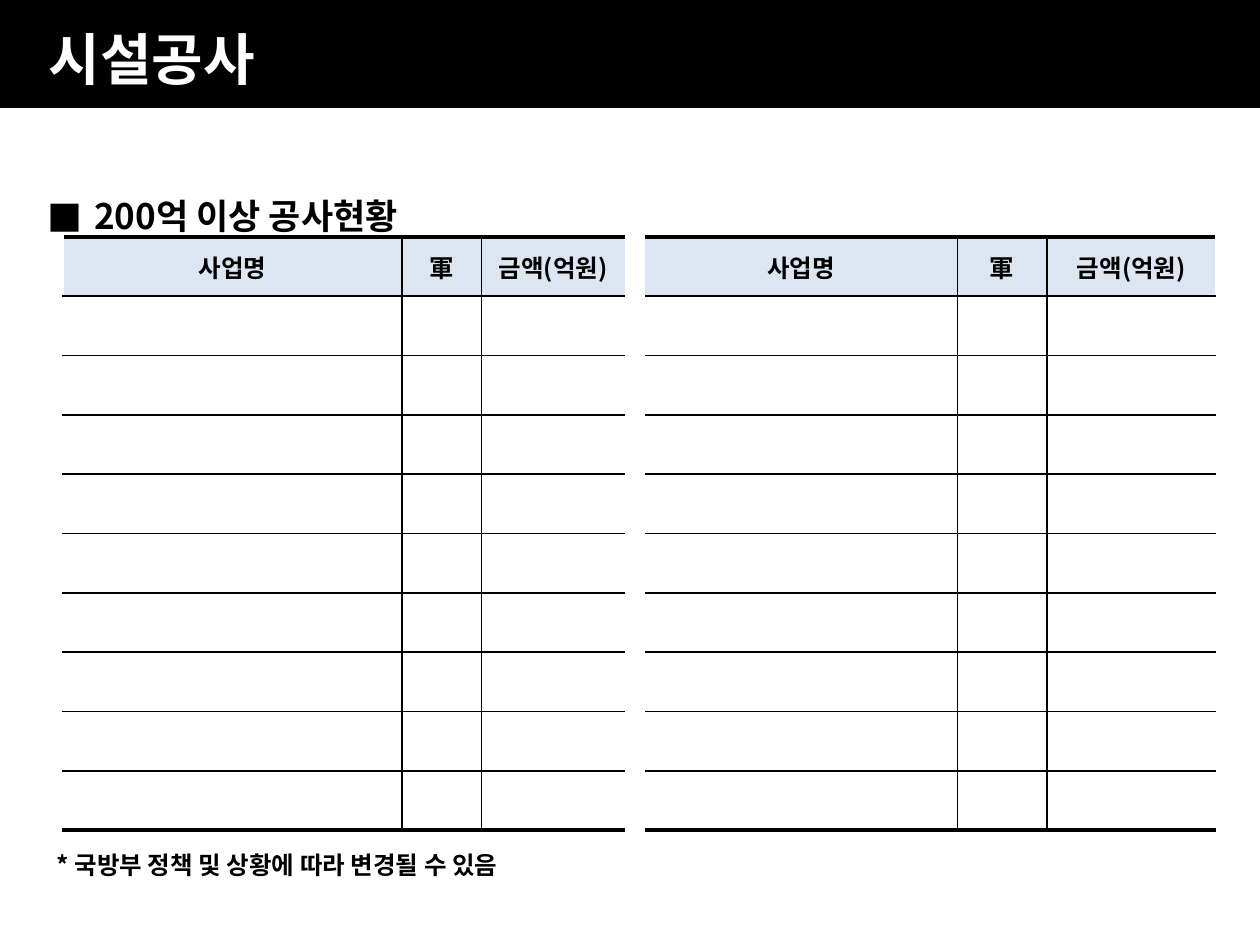
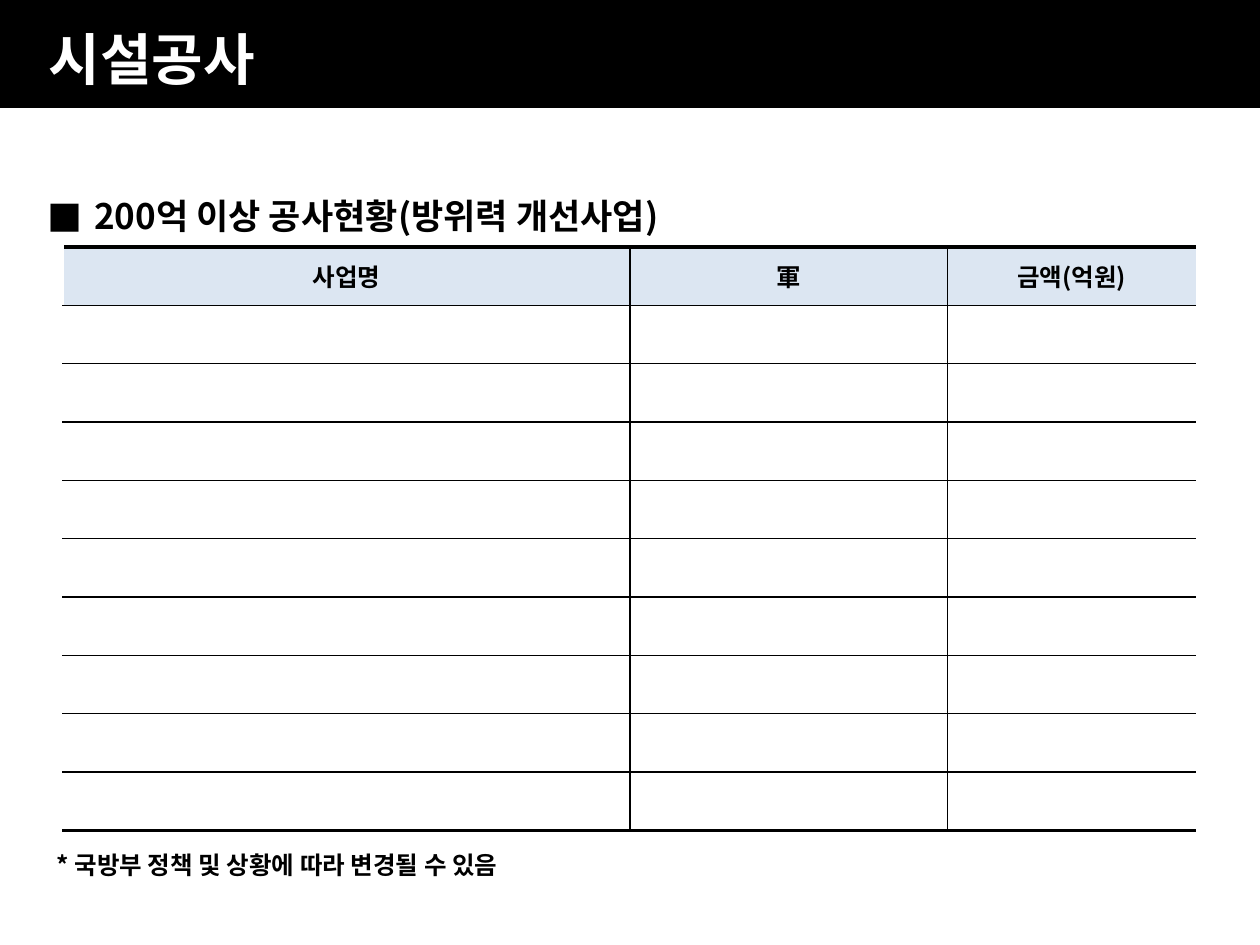
from dataclasses import dataclass
from typing import Optional

from lxml.etree import SubElement
from pptx import Presentation
from pptx.dml.color import RGBColor
from pptx.enum.shapes import MSO_SHAPE
from pptx.enum.text import MSO_ANCHOR, MSO_AUTO_SIZE, PP_ALIGN
from pptx.oxml import parse_xml
from pptx.oxml.ns import nsdecls, qn
from pptx.util import Inches, Pt

FONT = "Noto Sans CJK KR"
BLACK, WHITE, HEADER_FILL = "000000", "FFFFFF", "DCE6F2"
THIN, THICK = 1, 2.25
BODY_ROWS = 9
HEADERS = ("사업명", "軍", "금액(억원)")
TITLE = "시설공사"
FOOTNOTE = "* 국방부 정책 및 상황에 따라 변경될 수 있음"


@dataclass(frozen=True)
class Label:
    text: str
    box: tuple[float, float, float, float]
    size: float
    color: str = BLACK
    indent: float = 0
    line_spacing: Optional[float] = None
    bullet: Optional[str] = None
    anchor: MSO_ANCHOR = MSO_ANCHOR.TOP
    wrap: bool = True


@dataclass(frozen=True)
class ProjectTable:
    top: float
    height: float
    groups: tuple[tuple[float, ...], ...]
    gap: float = 0
    right_edge: Optional[str] = None


@dataclass(frozen=True)
class ProjectSlide:
    heading: str
    table: ProjectTable


SLIDES = (
    ProjectSlide(
        "200억 이상 공사현황",
        ProjectTable(1.88, 4.71, ((2.69, 0.63, 1.14), (2.48, 0.71, 1.34)), 0.16, WHITE),
    ),
    ProjectSlide(
        "200억 이상 공사현황(방위력 개선사업)",
        ProjectTable(1.96, 4.63, ((4.5, 2.52, 1.97),)),
    ),
)


def rgb(value: str) -> RGBColor:
    return RGBColor.from_string(value)


def apply(target, values: dict) -> None:
    for name, value in values.items():
        setattr(target, name, value)


def add_run(p, text: str, size: float, color: str) -> None:
    r = p.add_run()
    r.text = text
    apply(r.font, {"name": FONT, "size": Pt(size), "bold": True})
    r.font.color.rgb = rgb(color)
    SubElement(r.font._element, qn("a:ea"), typeface=FONT)


def add_label(s, label: Label) -> None:
    tf = s.shapes.add_textbox(*map(Inches, label.box)).text_frame
    apply(tf, {"word_wrap": label.wrap, "vertical_anchor": label.anchor})
    if not label.wrap:
        tf.auto_size = MSO_AUTO_SIZE.SHAPE_TO_FIT_TEXT
    p = tf.paragraphs[0]
    if label.line_spacing:
        p.line_spacing = label.line_spacing
    pPr = p._p.get_or_add_pPr()
    if label.indent:
        pPr.set("marL", str(Inches(label.indent)))
    if label.bullet:
        pPr.set("indent", str(-Inches(label.indent)))
        SubElement(pPr, qn("a:buFont"), typeface=FONT)
        SubElement(pPr, qn("a:buChar"), char=label.bullet)
    add_run(p, label.text, label.size, label.color)


def set_borders(cell, edges: dict[str, tuple[Optional[str], float]]) -> None:
    tcPr = cell._tc.get_or_add_tcPr()
    for i, side in enumerate("LRTB"):
        color, width = edges.get(side, (None, THIN))
        paint = f'<a:solidFill><a:srgbClr val="{color}"/></a:solidFill>' if color else "<a:noFill/>"
        tcPr.insert(i, parse_xml(
            f'<a:ln{side} {nsdecls("a")} w="{Pt(width)}">{paint}</a:ln{side}>'
        ))


def add_project_table(s, spec: ProjectTable) -> None:
    widths, columns = [], []
    for group in spec.groups:
        if widths:
            widths.append(spec.gap)
            columns.append(None)
        widths += group
        columns += range(len(HEADERS))
    rows = BODY_ROWS + 1
    frame = s.shapes.add_table(
        rows, len(widths), Inches(0.5), Inches(spec.top), Inches(sum(widths)), Inches(spec.height)
    )
    table = frame.table
    apply(table, {"first_row": False, "horz_banding": False})
    for column, width in zip(table.columns, widths):
        column.width = Inches(width)
    margins = dict.fromkeys(("margin_left", "margin_right", "margin_top", "margin_bottom"), 0)
    for y, row in enumerate(table.rows):
        row.height = Inches(spec.height / rows)
        for x, cell in enumerate(row.cells):
            field = columns[x]
            apply(cell, {**margins, "vertical_anchor": MSO_ANCHOR.MIDDLE})
            cell.fill.background()
            edges = {}
            if field is not None:
                edges = {
                    "T": (BLACK, THICK if y == 0 else THIN),
                    "B": (BLACK, THICK if y == BODY_ROWS else THIN),
                }
                if field > 0:
                    edges["L"] = (BLACK, THIN)
                if field < len(HEADERS) - 1:
                    edges["R"] = (BLACK, THIN)
                if x == 0:
                    edges["L"] = (WHITE, THIN)
                if x == len(widths) - 1:
                    edges["R"] = (spec.right_edge, THIN)
                if y == 0:
                    cell.fill.solid()
                    cell.fill.fore_color.rgb = rgb(HEADER_FILL)
                    p = cell.text_frame.paragraphs[0]
                    p.alignment = PP_ALIGN.CENTER
                    add_run(p, HEADERS[field], 14, BLACK)
            set_borders(cell, edges)


def add_title_band(s) -> None:
    band = s.shapes.add_shape(MSO_SHAPE.RECTANGLE, 0, 0, Inches(10), Inches(0.84))
    band.shadow.inherit = False
    band.fill.solid()
    band.fill.fore_color.rgb = rgb(BLACK)
    band.line.color.rgb = rgb(BLACK)
    band.line.width = Pt(2)
    add_label(s, Label(TITLE, (0, 0, 10, 0.92), 32, WHITE, 0.29, anchor=MSO_ANCHOR.MIDDLE))


def build_slide(prs, content: ProjectSlide) -> None:
    s = prs.slides.add_slide(prs.slide_layouts[6])
    add_title_band(s)
    add_label(s, Label(
        content.heading, (0.28, 1.23, 9.45, 5.59), 20, indent=0.37, line_spacing=1.8, bullet="■"
    ))
    add_project_table(s, content.table)
    add_label(s, Label(FOOTNOTE, (0.35, 6.51, 4.18, 0.53), 14, line_spacing=1.8, wrap=False))


def main() -> None:
    prs = Presentation()
    apply(prs, {"slide_width": Inches(10), "slide_height": Inches(7.5)})
    for content in SLIDES:
        build_slide(prs, content)
    prs.save("out.pptx")


if __name__ == "__main__":
    main()
